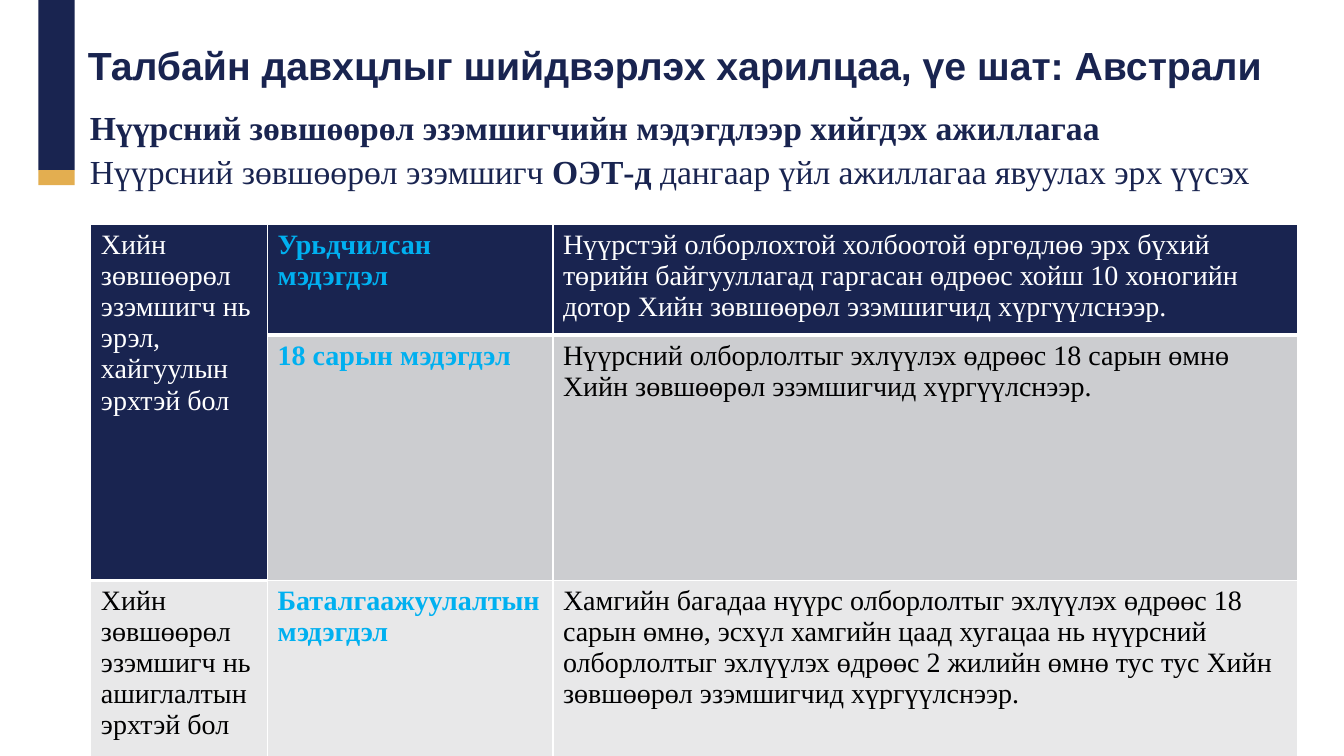
from lxml.etree import SubElement
from pptx import Presentation
from pptx.dml.color import RGBColor
from pptx.enum.shapes import MSO_SHAPE
from pptx.enum.text import MSO_ANCHOR, MSO_AUTO_SIZE, PP_ALIGN
from pptx.oxml.ns import qn
from pptx.util import Cm, Pt

NAVY, GOLD, SKY, WHITE, BLACK = "192450", "E3AE50", "00B0F0", "FFFFFF", "000000"
ROW_FILLS = [NAVY, "CCCDD0", "E8E8E9"]
SERIF = "Times New Roman"


def style(span, size, color, bold=False, font=SERIF):
    span.font.name = font
    span.font.size = Pt(size)
    span.font.bold = bold
    span.font.color.rgb = RGBColor.from_string(color)


def add_borders(cell, bottom_width):
    properties = cell._tc.get_or_add_tcPr()
    widths = {"a:lnL": 1, "a:lnR": 1, "a:lnT": 1, "a:lnB": bottom_width}
    for position, (tag, width) in enumerate(widths.items()):
        line = SubElement(properties, qn(tag), w=str(Pt(width)))
        fill = SubElement(line, qn("a:solidFill"))
        SubElement(fill, qn("a:srgbClr"), val=WHITE)
        properties.insert(position, line)


deck = Presentation()
deck.slide_width, deck.slide_height = Cm(33.86), Cm(19.05)
page = deck.slides.add_slide(deck.slide_layouts[1])

# Corner ribbon
for top, height, color in [(0, 4.29, NAVY), (4.29, 0.38, GOLD)]:
    ribbon = page.shapes.add_shape(MSO_SHAPE.RECTANGLE, Cm(0.97), Cm(top), Cm(0.91), Cm(height))
    ribbon.shadow.inherit = False
    ribbon.fill.solid()
    ribbon.fill.fore_color.rgb = RGBColor.from_string(color)
    ribbon.line.fill.background()

# Title
title = page.shapes.title
title.left, title.top, title.width, title.height = Cm(1.96), Cm(0.9), Cm(31.1), Cm(1.45)
title.text_frame.text = "Талбайн давхцлыг шийдвэрлэх харилцаа, үе шат: Австрали"
title.text_frame.word_wrap = False
title.text_frame.auto_size = MSO_AUTO_SIZE.NONE
title.text_frame.vertical_anchor = MSO_ANCHOR.MIDDLE
title.text_frame.paragraphs[0].alignment = PP_ALIGN.LEFT
style(title.text_frame.paragraphs[0].runs[0], 28, NAVY, True, "Arial")

# Introduction: each line is a list of (text, bold)
introduction = [
    [("Нүүрсний зөвшөөрөл эзэмшигчийн мэдэгдлээр хийгдэх ажиллагаа", True)],
    [("Нүүрсний зөвшөөрөл эзэмшигч ", False), ("OЭТ-д", True),
     (" дангаар үйл ажиллагаа явуулах эрх үүсэх", False)],
]
body = page.placeholders[1]
body.left, body.top, body.width, body.height = Cm(2.01), Cm(2.69), Cm(30.48), Cm(2.03)
frame = body.text_frame
frame.auto_size = MSO_AUTO_SIZE.NONE
for index, pieces in enumerate(introduction):
    para = frame.paragraphs[0] if index == 0 else frame.add_paragraph()
    para.line_spacing = 0.9
    para.space_before = Pt(5)
    properties = para._p.get_or_add_pPr()
    properties.set("marL", "0")
    properties.set("indent", "0")
    SubElement(properties, qn("a:buNone"))
    for text, bold in pieces:
        span = para.add_run()
        span.text = text
        style(span, 24, NAVY, bold)

# Table of notices
notices = [
    ("Хийн зөвшөөрөл эзэмшигч нь эрэл, хайгуулын эрхтэй бол", "Урьдчилсан мэдэгдэл",
     "Нүүрстэй олборлохтой холбоотой өргөдлөө эрх бүхий төрийн байгууллагад гаргасан "
     "өдрөөс хойш 10 хоногийн дотор Хийн зөвшөөрөл эзэмшигчид хүргүүлснээр."),
    ("", "18 сарын мэдэгдэл",
     "Нүүрсний олборлолтыг эхлүүлэх өдрөөс 18 сарын өмнө Хийн зөвшөөрөл эзэмшигчид "
     "хүргүүлснээр."),
    ("Хийн зөвшөөрөл эзэмшигч нь ашиглалтын эрхтэй бол", "Баталгаажуулалтын мэдэгдэл",
     "Хамгийн багадаа нүүрс олборлолтыг эхлүүлэх өдрөөс 18 сарын өмнө, эсхүл хамгийн цаад "
     "хугацаа нь нүүрсний олборлолтыг эхлүүлэх өдрөөс 2 жилийн өмнө тус тус Хийн зөвшөөрөл "
     "эзэмшигчид хүргүүлснээр."),
]
table = page.shapes.add_table(3, 3, Cm(2.29), Cm(5.66), Cm(30.4), Cm(14.15)).table
for column, width in zip(table.columns, [4.45, 7.19, 18.76]):
    column.width = Cm(width)
for row, height in zip(table.rows, [2.79, 6.18, 5.18]):
    row.height = Cm(height)
table.cell(0, 0).merge(table.cell(1, 0))

for row_index, notice in enumerate(notices):
    for column_index, text in enumerate(notice):
        cell = table.cell(row_index, column_index)
        cell.fill.solid()
        cell.fill.fore_color.rgb = RGBColor.from_string(ROW_FILLS[row_index])
        add_borders(cell, 3 if row_index == 0 else 1)
        if text:
            cell.text_frame.text = text
            plain = WHITE if row_index == 0 else BLACK
            is_name = column_index == 1
            style(cell.text_frame.paragraphs[0].runs[0], 20, SKY if is_name else plain, is_name)

deck.save("out.pptx")
